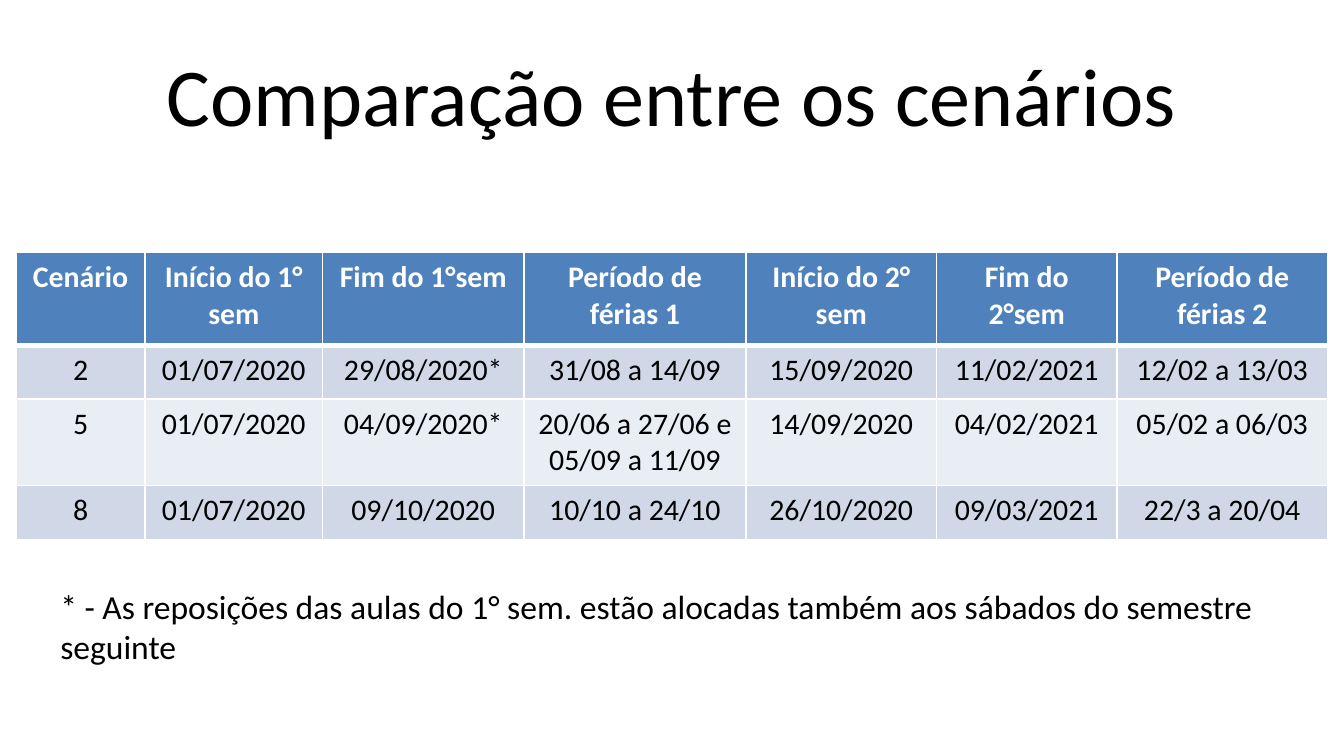
"""Build a slide that compares the academic calendar scenarios in a table."""
from dataclasses import astuple, dataclass

from lxml.etree import SubElement
from pptx import Presentation
from pptx.dml.color import RGBColor
from pptx.enum.text import MSO_ANCHOR as Anchor, PP_ALIGN as Align
from pptx.oxml.ns import qn
from pptx.slide import Slide
from pptx.table import _Cell as Cell
from pptx.text.text import TextFrame
from pptx.util import Inches, Pt

FONT = "Calibri"
BLACK, WHITE = "000000", "FFFFFF"
HEADER_FILL = "4F81BD"
BAND_FILLS = ("D0D8E8", "E9EDF4")
SLIDE_WIDTH = 10
SLIDE_HEIGHT = SLIDE_WIDTH * 9 / 16
COLUMN_WIDTHS = (0.96, 1.32, 1.5, 1.65, 1.42, 1.34, 1.57)
HEADER_HEIGHT, ROW_HEIGHT = 0.69, 0.4
THIN, THICK = 1, 3


@dataclass
class Scenario:
    """One table row: a scenario and its semester and holiday dates."""
    label: str
    first_start: str
    first_end: str
    first_break: str
    second_start: str
    second_end: str
    second_break: str


HEADINGS = Scenario("Cenário", "Início do 1° sem", "Fim do 1°sem", "Período de férias 1",
                    "Início do 2° sem", "Fim do 2°sem", "Período de férias 2")
SCENARIOS = (
    Scenario("2", "01/07/2020", "29/08/2020*", "31/08 a 14/09",
             "15/09/2020", "11/02/2021", "12/02 a 13/03"),
    Scenario("5", "01/07/2020", "04/09/2020*", "20/06 a 27/06 e\n05/09 a 11/09",
             "14/09/2020", "04/02/2021", "05/02 a 06/03"),
    Scenario("8", "01/07/2020", "09/10/2020", "10/10 a 24/10",
             "26/10/2020", "09/03/2021", "22/3 a 20/04"),
)


def rgb(color: str) -> RGBColor:
    """Turn a hex string into a colour."""
    return RGBColor.from_string(color)


def write(frame: TextFrame, text: str, size: float, color: str = BLACK,
          align: Align = Align.LEFT, bold: bool = False) -> None:
    """Fill a text frame and format all its runs alike."""
    frame.text = text
    for paragraph in frame.paragraphs:
        paragraph.alignment = align
        for run in paragraph.runs:
            run.font.name = FONT
            run.font.size = Pt(size)
            run.font.bold = bold
            run.font.color.rgb = rgb(color)


def add_borders(cell: Cell, top: float, bottom: float) -> None:
    """Give a cell white borders on its four sides."""
    properties = cell._tc.get_or_add_tcPr()
    for side, width in (("L", THIN), ("R", THIN), ("T", top), ("B", bottom)):
        border = SubElement(properties, qn(f"a:ln{side}"), w=str(Pt(width)))
        SubElement(SubElement(border, qn("a:solidFill")), qn("a:srgbClr"), val=WHITE)


def add_title(slide: Slide, text: str) -> None:
    """Place and format the title placeholder."""
    title = slide.shapes.title
    title.left, title.top = Inches(0.5), Inches(0.23)
    title.width, title.height = Inches(9), Inches(0.94)
    title.text_frame.vertical_anchor = Anchor.MIDDLE
    write(title.text_frame, text, 44, align=Align.CENTER)


def add_comparison(slide: Slide, rows: tuple[Scenario, ...]) -> None:
    """Draw the table, with a header row and banded scenario rows."""
    height = HEADER_HEIGHT + ROW_HEIGHT * (len(rows) - 1)
    table = slide.shapes.add_table(
        len(rows), len(COLUMN_WIDTHS), Inches(0.12), Inches(1.88),
        Inches(sum(COLUMN_WIDTHS)), Inches(height)).table
    for column, width in zip(table.columns, COLUMN_WIDTHS):
        column.width = Inches(width)
    for index, scenario in enumerate(rows):
        is_header = index == 0
        table.rows[index].height = Inches(HEADER_HEIGHT if is_header else ROW_HEIGHT)
        fill = HEADER_FILL if is_header else BAND_FILLS[(index - 1) % 2]
        for cell, text in zip(table.rows[index].cells, astuple(scenario)):
            write(cell.text_frame, text, 16, WHITE if is_header else BLACK,
                  Align.CENTER, is_header)
            add_borders(cell, THICK if index == 1 else THIN, THICK if is_header else THIN)
            cell.fill.solid()
            cell.fill.fore_color.rgb = rgb(fill)


def add_footnote(slide: Slide, text: str) -> None:
    """Write the footnote below the table."""
    footnote = slide.shapes.add_textbox(Inches(0.35), Inches(4.31), Inches(9.29), Inches(0.71))
    footnote.text_frame.word_wrap = True
    write(footnote.text_frame, text, 18)


def main() -> None:
    """Build and save the presentation."""
    presentation = Presentation()
    presentation.slide_width = Inches(SLIDE_WIDTH)
    presentation.slide_height = Inches(SLIDE_HEIGHT)
    slide = presentation.slides.add_slide(presentation.slide_layouts.get_by_name("Title Only"))
    add_title(slide, "Comparação entre os cenários")
    add_comparison(slide, (HEADINGS, *SCENARIOS))
    add_footnote(slide, "* - As reposições das aulas do 1° sem. estão alocadas também "
                        "aos sábados do semestre seguinte")
    presentation.save("out.pptx")


if __name__ == "__main__":
    main()
